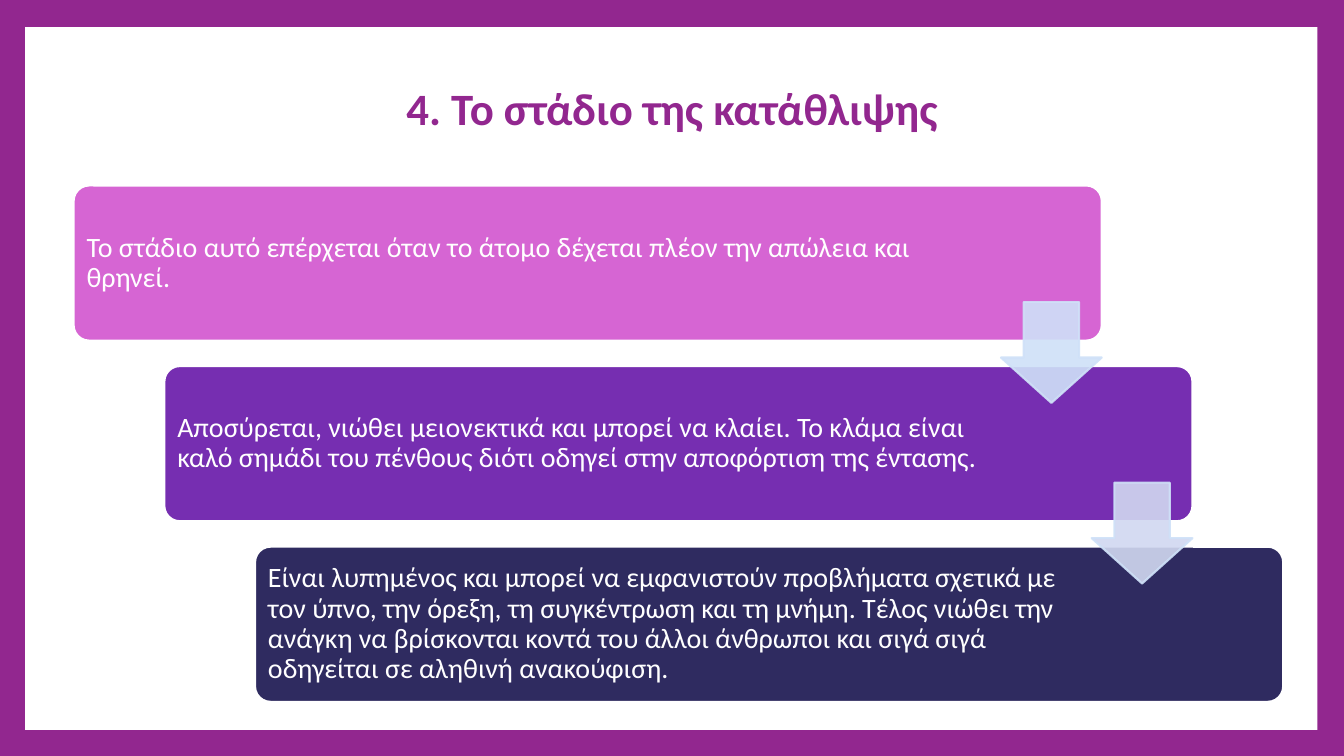
from lxml.etree import SubElement
from pptx import Presentation
from pptx.dml.color import RGBColor
from pptx.enum.shapes import MSO_SHAPE
from pptx.enum.text import MSO_ANCHOR, PP_ALIGN
from pptx.oxml.ns import qn
from pptx.util import Pt

CARDS = [
    ("Το στάδιο αυτό επέρχεται όταν το άτομο δέχεται πλέον την απώλεια και θρηνεί.",
     "D665D3", 122),
    ("Αποσύρεται, νιώθει μειονεκτικά και μπορεί να κλαίει. Το κλάμα είναι καλό "
     "σημάδι του πένθους διότι οδηγεί στην αποφόρτιση της έντασης.",
     "762EB1", 145.5),
    ("Είναι λυπημένος και μπορεί να εμφανιστούν προβλήματα σχετικά με τον ύπνο, "
     "την όρεξη, τη συγκέντρωση και τη μνήμη. Τέλος νιώθει την ανάγκη να "
     "βρίσκονται κοντά του άλλοι άνθρωποι και σιγά σιγά οδηγείται σε αληθινή "
     "ανακούφιση.",
     "2F2B60", 145.5),
]
ARROW_FILLS = ["CFE1F8", "D1D8F1"]
STEP_X, STEP_Y = 64.8, 129


def rgb(value):
    return RGBColor.from_string(value)


def write(tf, text, size=20, color="FFFFFF", bold=False, align=PP_ALIGN.LEFT,
          font="Calibri"):
    tf.word_wrap = True
    tf.vertical_anchor = MSO_ANCHOR.MIDDLE
    p = tf.paragraphs[0]
    p.alignment = align
    p.line_spacing = 0.9
    r = p.add_run()
    r.text = text
    r.font.name = font
    r.font.size = Pt(size)
    r.font.bold = bold
    r.font.color.rgb = rgb(color)


def set_alpha(fill, percent):
    for color in fill._xPr.iter(qn("a:srgbClr")):
        SubElement(color, qn("a:alpha"), val=str(percent * 1000))


class Deck:
    accent = "92278F"
    white = "FFFFFF"
    arrow_line = "CFE1F8"

    def __init__(self):
        self.prs = Presentation()
        self.prs.slide_width, self.prs.slide_height = Pt(960), Pt(540)
        self.s = self.prs.slides.add_slide(self.prs.slide_layouts[5])
        fill = self.s.background.fill
        fill.solid()
        fill.fore_color.rgb = rgb(self.accent)

    def shape(self, kind, x, y, w, h, fill, line=None):
        sp = self.s.shapes.add_shape(kind, Pt(x), Pt(y), Pt(w), Pt(h))
        sp.shadow.inherit = False
        sp.fill.solid()
        sp.fill.fore_color.rgb = rgb(fill)
        if line:
            sp.line.color.rgb = rgb(line)
            sp.line.width = Pt(1.5)
        else:
            sp.line.fill.background()
        return sp

    def panel(self, x, y, w, h):
        sp = self.shape(MSO_SHAPE.RECTANGLE, x, y, w, h, self.white)
        self.s.shapes._spTree.insert(2, sp._element)

    def title(self, text, x, y, w, h):
        sp = self.s.shapes.title
        sp.left, sp.top, sp.width, sp.height = Pt(x), Pt(y), Pt(w), Pt(h)
        write(sp.text_frame, text, size=32, color=self.accent, bold=True,
              align=PP_ALIGN.CENTER)

    def card(self, text, x, y, fill, margin_right):
        sp = self.shape(MSO_SHAPE.ROUNDED_RECTANGLE, x, y, 734.4, 110.8, fill,
                        self.white)
        sp.adjustments[0] = 0.1
        tf = sp.text_frame
        tf.margin_left, tf.margin_right = Pt(6), Pt(margin_right)
        tf.margin_top = tf.margin_bottom = Pt(6)
        write(tf, text)

    def arrow(self, x, y, fill):
        sp = self.shape(MSO_SHAPE.DOWN_ARROW, x, y, 72, 72, fill, self.arrow_line)
        sp.adjustments[0], sp.adjustments[1] = 0.45, 0.55
        sp.adjustments[0], sp.adjustments[1] = 0.55, 0.45
        set_alpha(sp.fill, 90)


def main():
    deck = Deck()
    deck.panel(18, 19.4, 923, 502)
    deck.title("4. Το στάδιο της κατάθλιψης", 91.4, 26, 777.6, 106.5)
    for i, (text, fill, margin_right) in enumerate(CARDS):
        deck.card(text, 52.6, 132.5, fill, margin_right) if i == 0 else deck.card(
            text, 52.6 + i * STEP_X, 132.5 + i * STEP_Y, fill, margin_right)
    for i, fill in enumerate(ARROW_FILLS):
        deck.arrow(715 + i * STEP_X, 215.8 + i * STEP_Y, fill)
    deck.prs.save("out.pptx")


if __name__ == "__main__":
    main()
